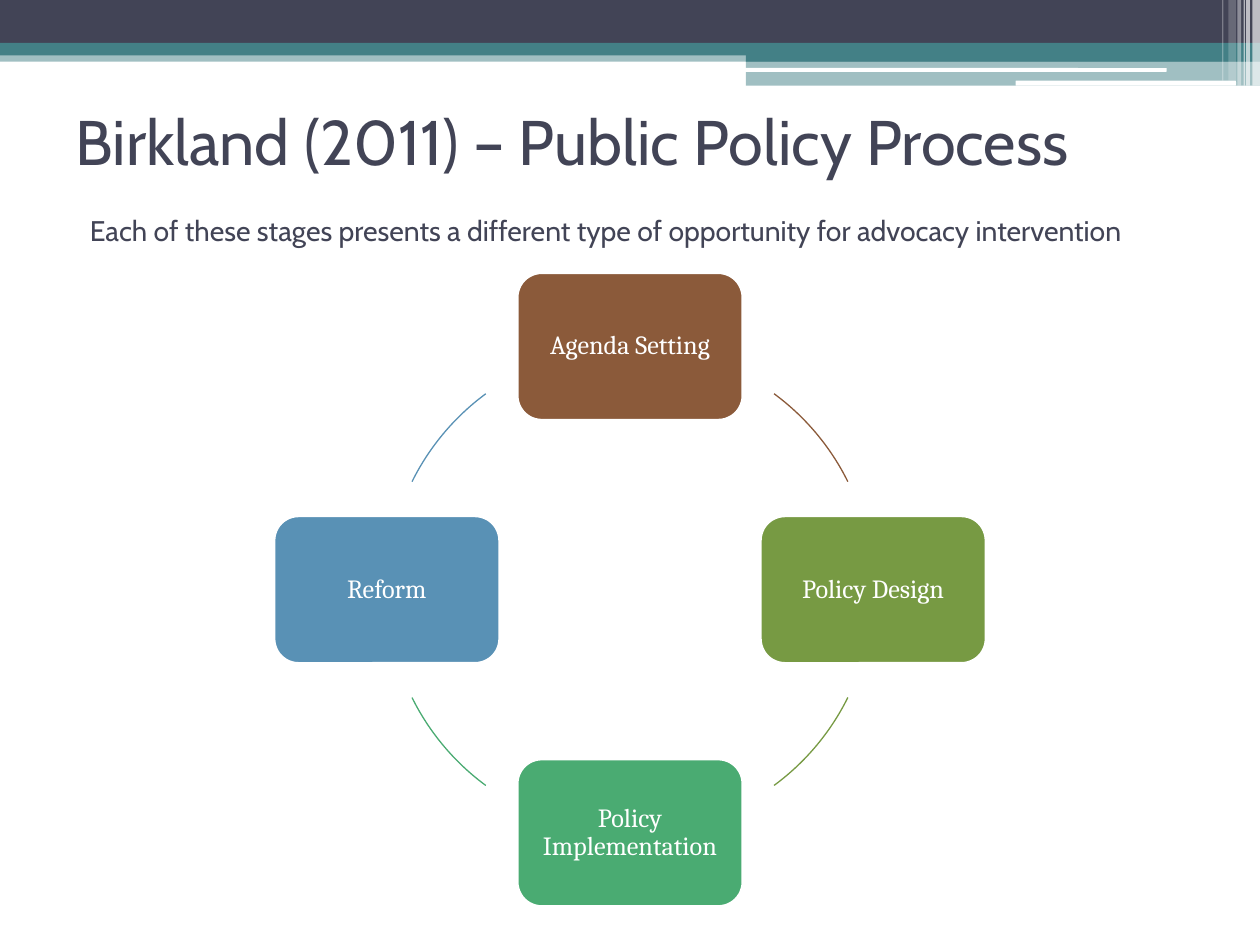
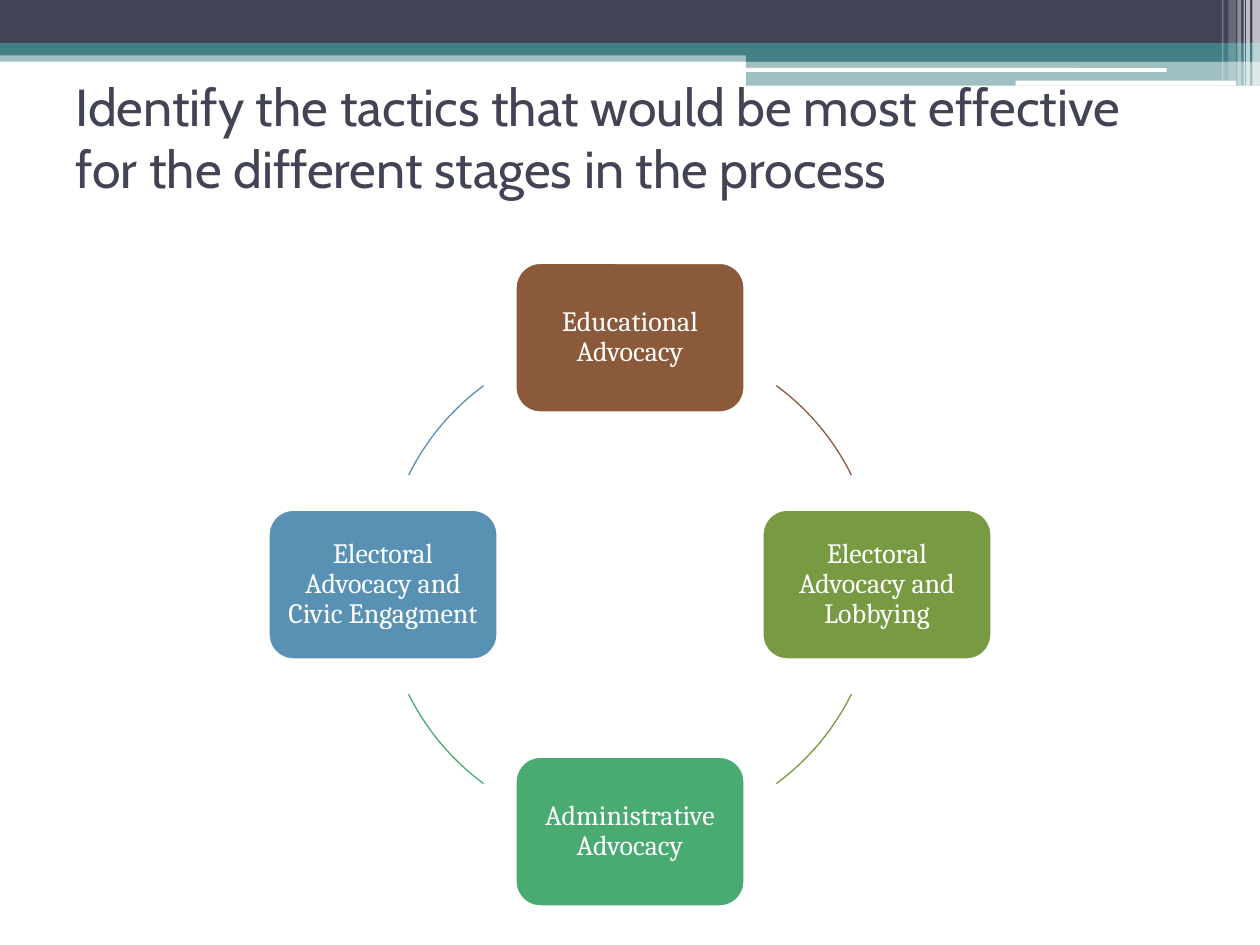
from math import cos, radians, sin

from lxml import etree
from pptx import Presentation
from pptx.dml.color import RGBColor
from pptx.enum.shapes import MSO_SHAPE
from pptx.enum.text import MSO_ANCHOR, MSO_AUTO_SIZE, PP_ALIGN
from pptx.oxml.ns import qn
from pptx.util import Inches, Pt

RECTANGLE = MSO_SHAPE.RECTANGLE
ROUNDED = MSO_SHAPE.ROUNDED_RECTANGLE
ARC = MSO_SHAPE.ARC
MIDDLE = MSO_ANCHOR.MIDDLE
NO_AUTOFIT = MSO_AUTO_SIZE.NONE
LEFT, CENTER = PP_ALIGN.LEFT, PP_ALIGN.CENTER

WHITE = RGBColor(0xFF, 0xFF, 0xFF)
NAVY = RGBColor(0x42, 0x44, 0x56)
TEAL = RGBColor(0x43, 0x80, 0x86)
BROWN = RGBColor(0x8B, 0x5A, 0x3A)
OLIVE = RGBColor(0x77, 0x9A, 0x43)
GREEN = RGBColor(0x4A, 0xAB, 0x72)
BLUE = RGBColor(0x59, 0x91, 0xB5)

TITLE_FONT, NODE_FONT = "Cabin", "Cambria"
TITLE_ONLY = 5

# Header bands: preset, left, top, width, height, colour, opacity in percent
BANDS = [
    (RECTANGLE, 0, 0.4, 10, 0.09, TEAL, 50),
    (RECTANGLE, 0, 0, 10, 0.34, NAVY, 100),
    (RECTANGLE, 0, 0.34, 10, 0.1, TEAL, 100),
    (RECTANGLE, 5.92, 0.39, 4.08, 0.1, TEAL, 100),
    (RECTANGLE, 5.92, 0.48, 4.08, 0.2, TEAL, 50),
    (ROUNDED, 5.91, 0.54, 3.35, 0.03, WHITE, 100),
    (ROUNDED, 8.06, 0.64, 1.75, 0.04, WHITE, 100),
]
# Light stripes at the right edge: left, width, height, opacity
STRIPES = [
    (9.94, 0.06, 0.68, 65),
    (9.89, 0.03, 0.68, 65),
    (9.87, 0.01, 0.68, 60),
    (9.82, 0.03, 0.68, 40),
    (9.75, 0.06, 0.64, 20),
    (9.7, 0.01, 0.64, 30),
]

# Cycle stages clockwise from the top: node angle, middle of the arc after it
CYCLE = [(BROWN, 270, 320), (OLIVE, 0, 40), (GREEN, 90, 140), (BLUE, 180, 220)]
ARC_HALF_SPAN = 13.65


def add_plain_shape(slide, preset, left, top, width, height):
    shape = slide.shapes.add_shape(
        preset, Inches(left), Inches(top), Inches(width), Inches(height))
    shape.shadow.inherit = False
    return shape


def add_band(slide, preset, left, top, width, height, color, opacity):
    band = add_plain_shape(slide, preset, left, top, width, height)
    band.fill.solid()
    band.fill.fore_color.rgb = color
    band.line.fill.background()
    if opacity < 100:
        color_element = band.element.spPr.find(".//" + qn("a:srgbClr"))
        etree.SubElement(color_element, qn("a:alpha"), val=str(opacity * 1000))
    return band


def move_header_to_layout(slide, layout):
    """Draw the header bands and let the layout hold them for all slides."""
    bands = [add_band(slide, *band) for band in BANDS]
    bands += [add_band(slide, RECTANGLE, left, 0, width, height, WHITE, opacity)
              for left, width, height, opacity in STRIPES]
    for position, band in enumerate(bands, start=2):
        layout.shapes.element.insert(position, band.element)


def add_run(paragraph, text, font, size, color):
    run = paragraph.add_run()
    run.text = text
    run.font.name = font
    run.font.size = Pt(size)
    run.font.color.rgb = color


def set_title(slide, top, text, size, bottom_inset=0.05):
    title = slide.shapes.title
    title.left, title.top = Inches(0.5), Inches(top)
    title.width, title.height = Inches(9), Inches(1.17)
    frame = title.text_frame
    frame.auto_size = NO_AUTOFIT
    frame.word_wrap = True
    frame.vertical_anchor = MIDDLE
    frame.margin_bottom = Inches(bottom_inset)
    paragraph = frame.paragraphs[0]
    paragraph.alignment = LEFT
    add_run(paragraph, text, TITLE_FONT, size, NAVY)
    return paragraph


def add_subtitle(paragraph, text, title_size, size):
    """Continue the title on a new line as tall as the first."""
    paragraph.add_line_break()
    line_break = paragraph._element[-1]
    etree.SubElement(line_break, qn("a:rPr"), sz=str(title_size * 100))
    add_run(paragraph, " ", TITLE_FONT, title_size, NAVY)
    add_run(paragraph, text, TITLE_FONT, size, NAVY)


def add_node(slide, center_x, center_y, width, height, text, size, color):
    node = add_plain_shape(slide, ROUNDED, center_x - width / 2,
                           center_y - height / 2, width, height)
    node.fill.solid()
    node.fill.fore_color.rgb = color
    node.line.color.rgb = WHITE
    node.line.width = Pt(1.5)
    frame = node.text_frame
    frame.word_wrap = True
    frame.vertical_anchor = MIDDLE
    frame.margin_left = frame.margin_right = Inches(0.06)
    frame.margin_top = frame.margin_bottom = Inches(0.06)
    paragraph = frame.paragraphs[0]
    paragraph.alignment = CENTER
    paragraph.line_spacing = 0.9
    add_run(paragraph, text, NODE_FONT, size, WHITE)


def add_arc(slide, center_x, center_y, radius, middle_angle, color):
    arc = add_plain_shape(slide, ARC, center_x - radius, center_y - radius,
                          2 * radius, 2 * radius)
    # Adjustments count 60000 units a degree, scaled by 100000
    arc.adjustments[0] = (middle_angle - ARC_HALF_SPAN) * 0.6
    arc.adjustments[1] = (middle_angle + ARC_HALF_SPAN) * 0.6
    arc.fill.background()
    arc.line.color.rgb = color
    arc.line.width = Pt(0.75)


def add_cycle(slide, box, node_width, node_height, texts, size):
    """Place four nodes and their arcs in a square box: left, top, side."""
    left, top, side = box
    radius = side / 2
    center_x, center_y = left + radius, top + radius
    for text, (color, angle, arc_angle) in zip(texts, CYCLE):
        add_node(slide, center_x + radius * cos(radians(angle)),
                 center_y + radius * sin(radians(angle)),
                 node_width, node_height, text, size, color)
        add_arc(slide, center_x, center_y, radius, arc_angle, color)


def main():
    presentation = Presentation()
    presentation.slide_width = Inches(10)
    presentation.slide_height = Inches(7.5)
    layout = presentation.slide_layouts[TITLE_ONLY]

    # Policy process
    process = presentation.slides.add_slide(layout)
    move_header_to_layout(process, layout)
    heading = set_title(process, 0.83, "Birkland (2011) – Public Policy Process", 36)
    add_subtitle(heading, "Each of these stages presents a different type of "
                 "opportunity for advocacy intervention", 36, 16.2)
    add_cycle(process, (3.07, 2.75, 3.86), 1.79, 1.17,
              ["Agenda Setting", "Policy Design", "Policy Implementation", "Reform"],
              15)

    # Advocacy tactics
    tactics = presentation.slides.add_slide(layout)
    set_title(tactics, 0.75, "Identify the tactics that would be most effective "
              "for the different stages in the process", 29.7, bottom_inset=0.55)
    add_cycle(tactics, (3.04, 2.68, 3.92), 1.82, 1.19,
              ["Educational Advocacy", "Electoral Advocacy and Lobbying",
               "Administrative Advocacy", "Electoral Advocacy and Civic Engagment"],
              16)

    presentation.save("out.pptx")


if __name__ == "__main__":
    main()
